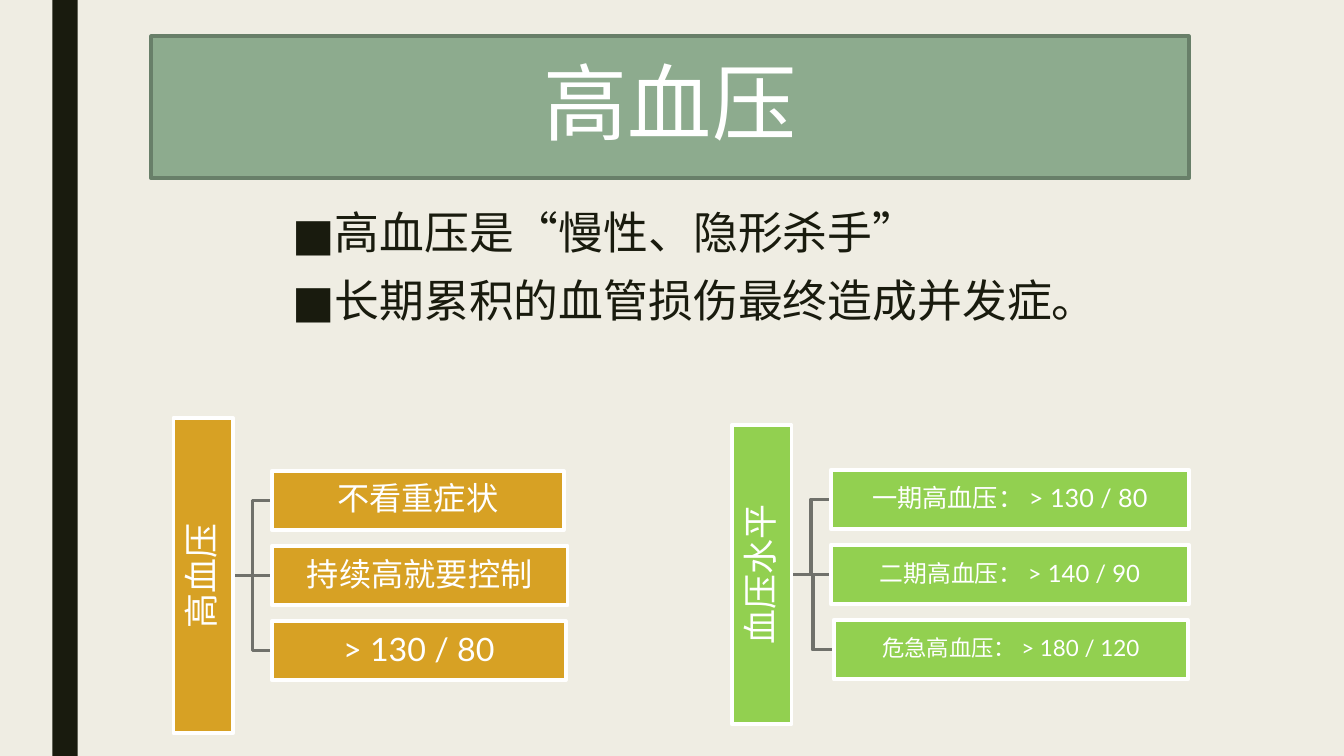
from dataclasses import dataclass

from lxml.etree import SubElement
from pptx import Presentation
from pptx.dml.color import RGBColor
from pptx.enum.shapes import MSO_CONNECTOR, MSO_SHAPE
from pptx.enum.text import MSO_ANCHOR, PP_ALIGN
from pptx.oxml.ns import qn
from pptx.util import Inches, Pt

FONT = "Lato"
CREAM = RGBColor(0xEF, 0xED, 0xE3)
INK = RGBColor(0x19, 0x1B, 0x0E)
WHITE = RGBColor(0xFF, 0xFF, 0xFF)
SAGE = RGBColor(0x8D, 0xAB, 0x8E)
DARK_SAGE = RGBColor(0x68, 0x7F, 0x69)
GOLD = RGBColor(0xD7, 0xA1, 0x24)
GREEN = RGBColor(0x92, 0xD0, 0x50)
GREY = RGBColor(0x70, 0x71, 0x6B)

LINE_WIDTH = Pt(2.75)
BOX_HEIGHT = 0.59
ROW_STEP = 0.745
BULLETS = ["高血压是“慢性、隐形杀手”", "长期累积的血管损伤最终造成并发症。"]


@dataclass(frozen=True)
class Branch:
    text: str
    left: float
    width: float
    size: int


@dataclass(frozen=True)
class Tree:
    root: str
    root_right: float
    root_length: float
    middle: float
    color: RGBColor
    inset: float
    branches: tuple[Branch, ...]


TREES = (
    Tree("高血压", 2.31, 3.13, 5.71, GOLD, 0.02, (
        Branch("不看重症状", 2.7, 2.89, 23),
        Branch("持续高就要控制", 2.7, 2.93, 23),
        Branch("> 130 / 80", 2.7, 2.91, 23),
    )),
    Tree("血压水平", 7.85, 2.97, 5.7, GREEN, 0.01, (
        Branch("一期高血压： > 130 / 80", 8.24, 3.55, 18),
        Branch("二期高血压： > 140 / 90", 8.24, 3.55, 17),
        Branch("危急高血压： > 180 / 120", 8.27, 3.51, 16),
    )),
)


def format_runs(para, size: float, color: RGBColor) -> None:
    for span in para.runs:
        span.font.name = FONT
        span.font.size = Pt(size)
        span.font.color.rgb = color


def set_line(shape, color: RGBColor) -> None:
    shape.line.color.rgb = color
    shape.line.width = LINE_WIDTH


def add_bar(slide) -> None:
    bar = slide.shapes.add_shape(
        MSO_SHAPE.RECTANGLE, Inches(0.52), 0, Inches(0.25), Inches(7.5))
    bar.shadow.inherit = False
    bar.fill.solid()
    bar.fill.fore_color.rgb = INK
    bar.line.fill.background()


def fill_title(slide, text: str) -> None:
    title = slide.shapes.title
    title.left, title.top = Inches(1.5), Inches(0.36)
    title.width, title.height = Inches(10.29), Inches(1.41)
    title.fill.solid()
    title.fill.fore_color.rgb = SAGE
    set_line(title, DARK_SAGE)
    title.text_frame.text = text
    title.text_frame.vertical_anchor = MSO_ANCHOR.MIDDLE
    para = title.text_frame.paragraphs[0]
    para.alignment = PP_ALIGN.CENTER
    para.line_spacing = 0.89
    format_runs(para, 60, WHITE)


def add_bullets(slide, lines: list[str]) -> None:
    box = slide.shapes.add_textbox(
        Inches(2.8), Inches(2.03), Inches(8.48), Inches(1.64))
    frame = box.text_frame
    frame.word_wrap = True
    frame.text = "\n".join(lines)
    for para in frame.paragraphs:
        para.line_spacing = 0.94
        para.space_before, para.space_after = Pt(10), Pt(2)
        format_runs(para, 32, INK)
        properties = para._p.get_or_add_pPr()
        properties.set("marL", str(Inches(0.42)))
        properties.set("indent", str(-Inches(0.42)))
        SubElement(properties, qn("a:buFont"), typeface=FONT)
        SubElement(properties, qn("a:buChar"), char="■")


def add_box(slide, text: str, left: float, middle: float, width: float,
            size: int, color: RGBColor, inset: float):
    box = slide.shapes.add_shape(
        MSO_SHAPE.RECTANGLE, Inches(left), Inches(middle - BOX_HEIGHT / 2),
        Inches(width), Inches(BOX_HEIGHT))
    box.shadow.inherit = False
    box.fill.solid()
    box.fill.fore_color.rgb = color
    set_line(box, WHITE)
    frame = box.text_frame
    frame.word_wrap = True
    frame.vertical_anchor = MSO_ANCHOR.MIDDLE
    frame.margin_left = frame.margin_right = Inches(inset)
    frame.margin_top = frame.margin_bottom = Inches(inset)
    frame.text = text
    para = frame.paragraphs[0]
    para.alignment = PP_ALIGN.CENTER
    para.line_spacing = 0.9
    format_runs(para, size, WHITE)
    return box


def add_link(slide, left: float, right: float, start: float, end: float) -> None:
    """Join a root to a branch, straight on one level and by an elbow otherwise."""
    if start == end:
        link = slide.shapes.add_connector(
            MSO_CONNECTOR.STRAIGHT, Inches(left), Inches(start),
            Inches(right), Inches(end))
        SubElement(link._element.spPr, qn("a:effectLst"))
    else:
        bend = (left + right) / 2
        builder = slide.shapes.build_freeform(Inches(left), Inches(start))
        builder.add_line_segments(
            [(Inches(x), Inches(y)) for x, y in
             ((bend, start), (bend, end), (right, end))], close=False)
        link = builder.convert_to_shape()
        link.shadow.inherit = False
        link.fill.background()
    set_line(link, GREY)


def add_tree(slide, tree: Tree) -> None:
    rows = [(branch, tree.middle + (index - 1) * ROW_STEP)
            for index, branch in enumerate(tree.branches)]
    for branch, middle in rows:
        add_link(slide, tree.root_right, branch.left, tree.middle, middle)
    root_left = tree.root_right - (BOX_HEIGHT + tree.root_length) / 2
    root = add_box(slide, tree.root, root_left, tree.middle,
                   tree.root_length, 25, tree.color, tree.inset)
    root.rotation = 270
    for branch, middle in rows:
        add_box(slide, branch.text, branch.left, middle, branch.width,
                branch.size, tree.color, tree.inset)


def main() -> None:
    deck = Presentation()
    deck.slide_width, deck.slide_height = Inches(13.33), Inches(7.5)
    page = deck.slides.add_slide(deck.slide_layouts.get_by_name("Title Only"))
    page.background.fill.solid()
    page.background.fill.fore_color.rgb = CREAM
    add_bar(page)
    fill_title(page, "高血压")
    for tree in TREES:
        add_tree(page, tree)
    add_bullets(page, BULLETS)
    deck.save("out.pptx")


if __name__ == "__main__":
    main()
